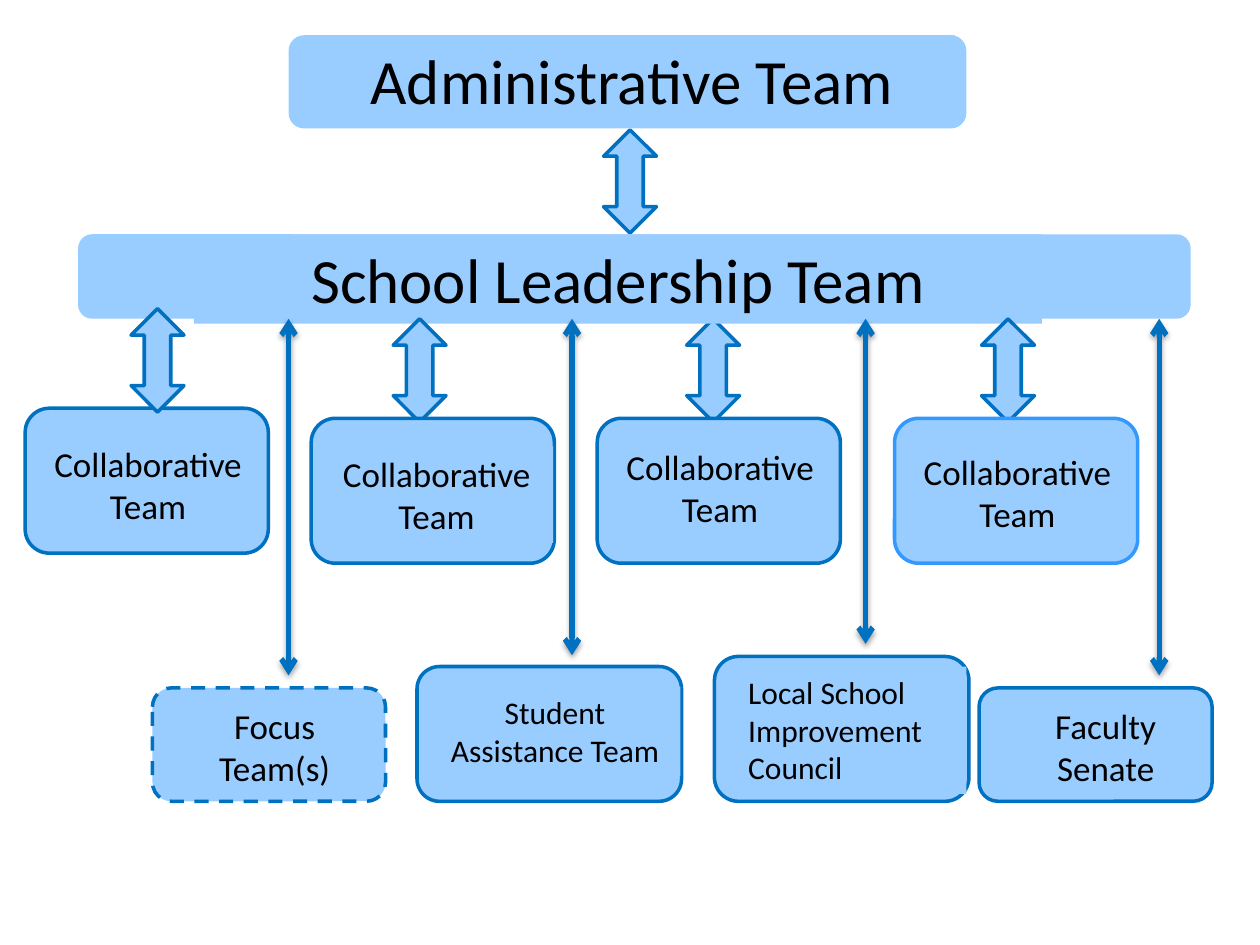
from lxml import etree
from pptx import Presentation
from pptx import util as u
from pptx.dml.color import RGBColor
from pptx.enum import dml, shapes, text
from pptx.oxml import parse_xml
from pptx.oxml.ns import nsdecls, qn

SHADOW = (
    f'<a:effectLst {nsdecls("a")}><a:outerShdw blurRad="39370" dist="22860" '
    'dir="5400000" rotWithShape="0"><a:srgbClr val="000000">'
    '<a:alpha val="35000"/></a:srgbClr></a:outerShdw></a:effectLst>'
)


def color(code):
    return RGBColor.from_string(code)


class Chart:
    fill = "99CCFF"
    edge = "0070C0"
    ink = "000000"
    font = "Calibri"

    def __init__(self, slide):
        self.slide = slide

    def paint(self, shape):
        shape.fill.solid()
        shape.fill.fore_color.rgb = color(self.fill)

    def block(self, kind, area, edge=None, dash=False):
        shape = self.slide.shapes.add_shape(kind, *map(u.Inches, area))
        shape.shadow.inherit = False
        self.paint(shape)
        if edge:
            shape.line.color.rgb = color(edge)
            shape.line.width = u.Pt(2)
            if dash:
                shape.line.dash_style = dml.MSO_LINE.DASH
        else:
            shape.line.fill.background()

    def box(self, area, edge=None, dash=False):
        self.block(shapes.MSO_SHAPE.ROUNDED_RECTANGLE, area, edge, dash)

    def link(self, left, top):
        self.block(shapes.MSO_SHAPE.UP_DOWN_ARROW, (left, top, 0.42, 0.82), self.edge)

    def letter(self, shape, words, size, align):
        self.paint(shape)
        frame = shape.text_frame
        frame.text = words
        frame.word_wrap = True
        frame.auto_size = text.MSO_AUTO_SIZE.NONE
        frame.vertical_anchor = text.MSO_ANCHOR.TOP
        para = frame.paragraphs[0]
        para.alignment = align
        font = para.runs[0].font
        font.name = self.font
        font.size = u.Pt(size)
        font.color.rgb = color(self.ink)

    def label(self, area, words, size=20, align=text.PP_ALIGN.CENTER):
        shape = self.slide.shapes.add_textbox(*map(u.Inches, area))
        self.letter(shape, words, size, align)

    def title(self, area, words):
        shape = self.slide.shapes.title
        shape.left, shape.top, shape.width, shape.height = map(u.Inches, area)
        self.letter(shape, words, 36, text.PP_ALIGN.CENTER)
        tree = shape.element.getparent()
        tree.append(shape.element)

    def arrow(self, x, end):
        spots = map(u.Inches, (x, 2.53, x, end))
        line = self.slide.shapes.add_connector(shapes.MSO_CONNECTOR.STRAIGHT, *spots)
        line.line.color.rgb = color(self.edge)
        line.line.width = u.Pt(3)
        props = line.element.spPr.find(qn("a:ln"))
        for tag in ("a:headEnd", "a:tailEnd"):
            etree.SubElement(props, qn(tag), type="arrow")
        line.element.spPr.append(parse_xml(SHADOW))


def main():
    deck = Presentation()
    deck.slide_width, deck.slide_height = u.Inches(10), u.Inches(7.5)
    chart = Chart(deck.slides.add_slide(deck.slide_layouts[5]))

    for left, top in ((4.79, 1.03), (5.45, 2.53)):
        chart.link(left, top)

    chart.box((2.29, 0.28, 5.38, 0.74))
    chart.title((2.45, 0.28, 5.13, 0.7), "Administrative Team")
    chart.box((0.62, 1.86, 8.83, 0.67))
    chart.label((1.54, 1.86, 6.73, 0.71), "School Leadership Team", 36)
    for left in (3.12, 7.79):
        chart.link(left, 2.53)

    teams = (
        (0.2, 3.24, 0.25, 3.46, chart.edge),
        (2.47, 3.32, 2.54, 3.54, chart.edge),
        (4.74, 3.32, 4.79, 3.49, chart.edge),
        (7.1, 3.32, 7.15, 3.53, "3399FF"),
    )
    for left, top, inner, head, edge in teams:
        chart.box((left, top, 1.93, 1.15), edge)
        chart.label((inner, head, 1.85, 0.77), "Collaborative Team")
    chart.link(1.04, 2.45)

    for x, end in ((2.29, 5.36), (4.54, 5.2), (6.87, 5.11), (9.2, 5.36)):
        chart.arrow(x, end)

    mid, left = text.PP_ALIGN.CENTER, text.PP_ALIGN.LEFT
    groups = (
        ((1.21, 5.46, 1.85, 0.9), (1.38, 5.54, 1.6, 0.76), "Focus Team(s)", 20, mid, True),
        ((3.31, 5.29, 2.1, 1.07), (3.41, 5.45, 1.99, 0.71), "Student Assistance Team", 18, mid, False),
        ((5.67, 5.21, 2.02, 1.15), (5.84, 5.29, 1.83, 1.01), "Local School Improvement Council", 18, left, False),
        ((7.77, 5.46, 1.85, 0.9), (8.02, 5.54, 1.51, 0.76), "Faculty Senate", 20, mid, False),
    )
    for area, inner, words, size, align, dash in groups:
        chart.box(area, chart.edge, dash)
        chart.label(inner, words, size, align)

    deck.save("out.pptx")


if __name__ == "__main__":
    main()
